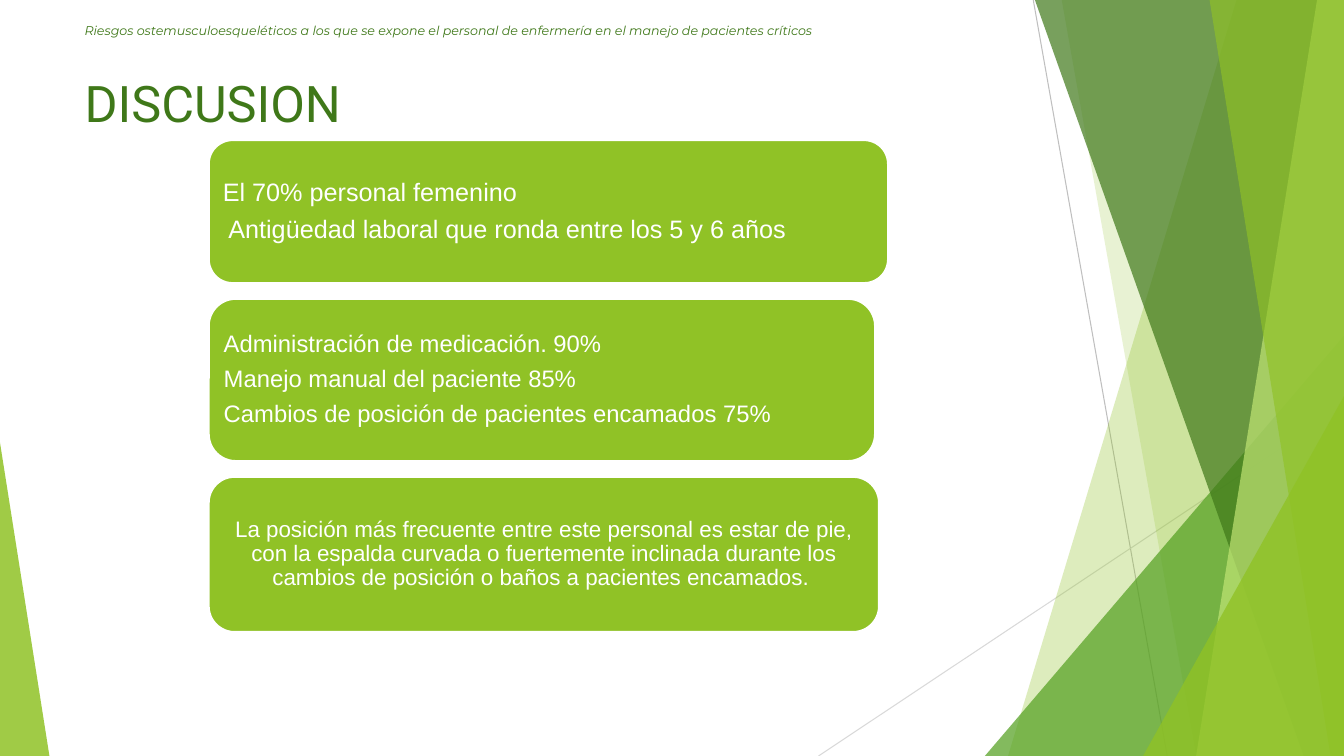
from lxml import etree
from pptx import Presentation
from pptx.dml.color import RGBColor
from pptx.enum.shapes import MSO_CONNECTOR, MSO_SHAPE
from pptx.enum.text import MSO_ANCHOR, PP_ALIGN
from pptx.oxml.ns import qn
from pptx.util import Inches, Pt

STRAIGHT = MSO_CONNECTOR.STRAIGHT
TRIANGLE = MSO_SHAPE.ISOSCELES_TRIANGLE
ROUNDED = MSO_SHAPE.ROUNDED_RECTANGLE
LEFT, CENTER = PP_ALIGN.LEFT, PP_ALIGN.CENTER
TOP, MIDDLE = MSO_ANCHOR.TOP, MSO_ANCHOR.MIDDLE

COLORS = {
    "white": "FFFFFF",
    "lime": "90C226",
    "pale lime": "C0E474",
    "green": "54A021",
    "dark green": "3F7819",
    "gray": "BFBFBF",
    "light gray": "D9D9D9",
}

presentation = Presentation()
presentation.slide_width = Inches(13.33)
presentation.slide_height = Inches(7.5)
slide = presentation.slides.add_slide(presentation.slide_layouts[5])
shapes = slide.shapes

# All lengths are in hundredths of the slide's width and height
COLUMN = presentation.slide_width / 100
ROW = presentation.slide_height / 100


def paint(shape, color, opacity=100):
    """Give the shape a flat fill with the opacity in percent, and no outline or shadow."""
    shape.shadow.inherit = False
    shape.line.fill.background()
    shape.fill.solid()
    shape.fill.fore_color.rgb = RGBColor.from_string(COLORS[color])
    if opacity < 100:
        tint = shape.fill._xPr.find(qn("a:solidFill"))[0]
        etree.SubElement(tint, qn("a:alpha")).set("val", str(opacity * 1000))


def write(shape, lines, font, size, color, italic=False, align=LEFT, anchor=MIDDLE,
          margins=(0.1, 0.05), line_spacing=1.0, space_after=0):
    frame = shape.text_frame
    frame.word_wrap = True
    frame.vertical_anchor = anchor
    frame.margin_left = frame.margin_right = Inches(margins[0])
    frame.margin_top = frame.margin_bottom = Inches(margins[1])
    for index, line in enumerate(lines):
        paragraph = frame.add_paragraph() if index else frame.paragraphs[0]
        paragraph.alignment = align
        paragraph.line_spacing = line_spacing
        paragraph.space_after = Pt(space_after)
        run = paragraph.add_run()
        run.text = line
        run.font.name = font
        run.font.size = Pt(size)
        run.font.italic = italic
        run.font.color.rgb = RGBColor.from_string(COLORS[color])


# Thin lines behind the green facets
for x1, y1, x2, y2, color in [
    (76.88, 0, 86.85, 100, "gray"),
    (100, 53.73, 60.9, 100, "light gray"),
]:
    thin_line = shapes.add_connector(
        STRAIGHT, int(x1 * COLUMN), int(y1 * ROW), int(x2 * COLUMN), int(y2 * ROW))
    thin_line.line.color.rgb = RGBColor.from_string(COLORS[color])
    thin_line.line.width = Pt(0.75)
    etree.SubElement(thin_line._element.spPr, qn("a:effectLst"))

# A band runs from its top x to its bottom x and fills everything to the right;
# a triangle stands on the bottom edge: left, top, width, apex
facets = [
    ("band", (92.1, 75.3), "lime", 30),
    ("band", (78.75, 88.73), "lime", 20),
    ("triangle", (73.28, 44.4, 26.72, 1), "green", 72),
    ("band", (76.58, 96.83), "dark green", 70),
    ("band", (97.73, 89.4), "pale lime", 70),
    ("band", (89.7, 98.85), "lime", 65),
    ("triangle", (85.05, 52.4, 14.95, 1), "lime", 80),
    ("triangle", (0, 58.53, 3.68, 0), "lime", 85),
]
for kind, geometry, color, opacity in facets:
    if kind == "band":
        top_x, bottom_x = geometry
        builder = shapes.build_freeform(top_x, 0, scale=(COLUMN, ROW))
        builder.add_line_segments([(100, 0), (100, 100), (bottom_x, 100)], close=True)
        facet = builder.convert_to_shape()
    else:
        left, top, width, apex = geometry
        facet = shapes.add_shape(
            TRIANGLE, int(left * COLUMN), int(top * ROW),
            int(width * COLUMN), int((100 - top) * ROW))
        facet.adjustments[0] = apex
    paint(facet, color, opacity)

# Title and running header share the left margin
MARGIN = int(5.55 * COLUMN)
title = shapes.title
title.left, title.top = MARGIN, int(8.93 * ROW)
title.width, title.height = int(70.5 * COLUMN), int(19.2 * ROW)
write(title, ["DISCUSION"], "Roboto", 36, "dark green", anchor=TOP)

header = shapes.add_textbox(
    MARGIN, int(1.33 * ROW), int(67.35 * COLUMN), int(5.33 * ROW))
write(header, ["Riesgos ostemusculoesqueléticos a los que se expone el personal de "
               "enfermería en el manejo de pacientes críticos"],
      "Montserrat", 9, "dark green", italic=True)

# Stacked cards: width, height, font size, alignment, lines
CARD_LEFT, CARD_GAP = 15.53, 2.07
cards = [
    (50.55, 18.93, 18, LEFT, [
        "El 70% personal femenino",
        " Antigüedad laboral que ronda entre los 5 y 6 años",
    ]),
    (49.58, 21.47, 17, LEFT, [
        "Administración de medicación. 90%",
        "Manejo manual del paciente 85%",
        "Cambios de posición de pacientes encamados 75%",
    ]),
    (49.88, 20.53, 16, CENTER, [
        "La posición más frecuente entre este personal es estar de pie, con la espalda "
        "curvada o fuertemente inclinada durante los cambios de posición o baños a "
        "pacientes encamados. ",
    ]),
]
card_top = 18.53
for width, height, size, align, lines in cards:
    card = shapes.add_shape(
        ROUNDED, int(CARD_LEFT * COLUMN), int(card_top * ROW),
        int(width * COLUMN), int(height * ROW))
    paint(card, "lime")
    card.line.color.rgb = RGBColor.from_string(COLORS["white"])
    card.line.width = Pt(1.5)
    write(card, lines, "Arial", size, "white", align=align,
          margins=(0.07, 0.04), line_spacing=0.9, space_after=round(0.4 * size, 1))
    card_top += height + CARD_GAP

presentation.save("out.pptx")
